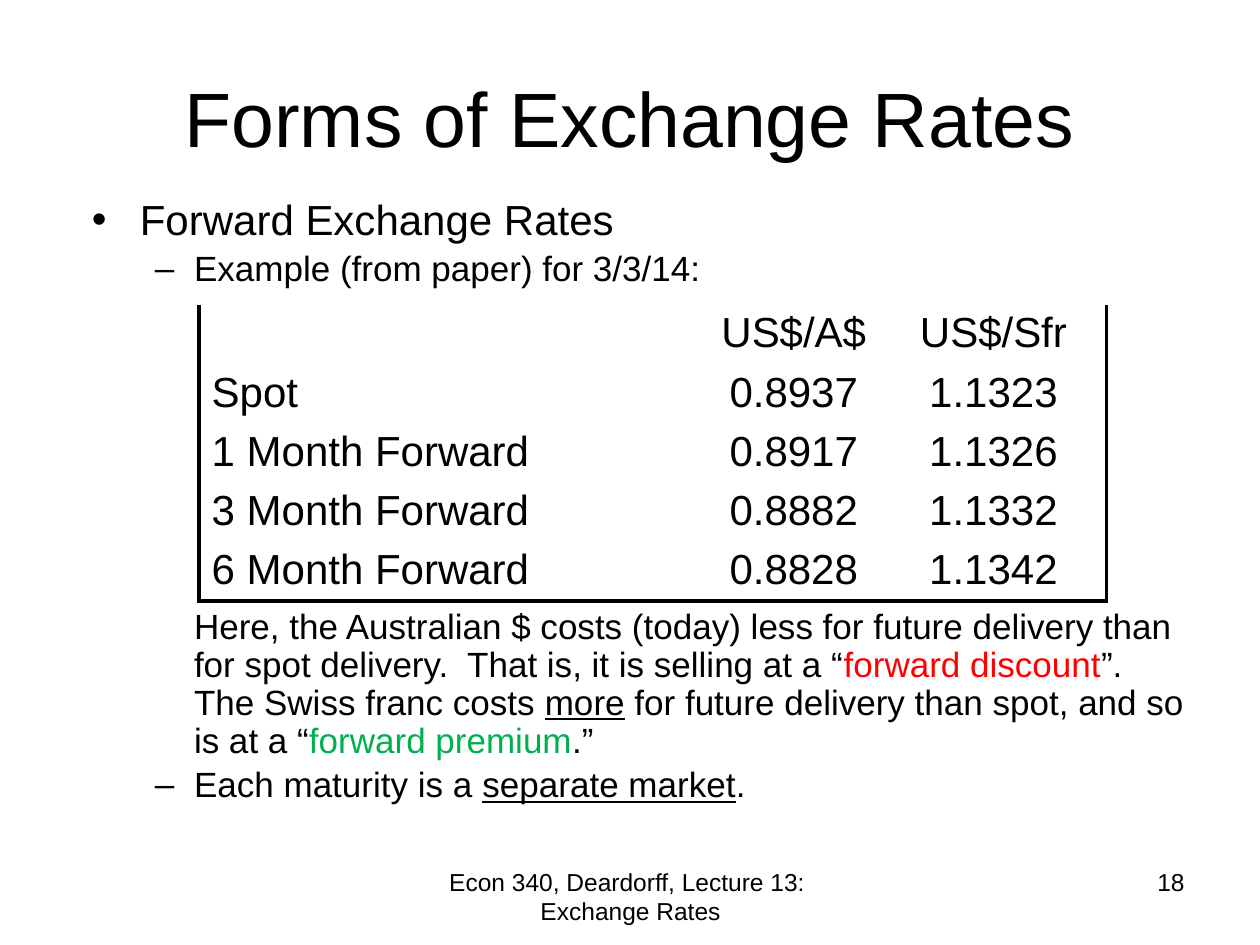
from dataclasses import dataclass

import pptx
import pptx.dml.color
import pptx.enum.text
import pptx.oxml
import pptx.oxml.ns
import pptx.util

Inches, Pt = pptx.util.Inches, pptx.util.Pt
ALIGN = pptx.enum.text.PP_ALIGN
ANCHOR = pptx.enum.text.MSO_ANCHOR


@dataclass(frozen=True)
class Theme:
    font: str = "Arial"
    text: str = "000000"
    discount: str = "FF0000"
    premium: str = "00B050"
    title: float = 44
    heading: float = 24
    detail: float = 20
    footer: float = 14
    border: float = 2.25


@dataclass(frozen=True)
class Run:
    text: str
    color: str = Theme.text
    underline: bool = False


@dataclass(frozen=True)
class Item:
    runs: list[Run]
    level: int = 1
    bullet: str = ""
    space_before: float = 4


@dataclass(frozen=True)
class Footer:
    text: str
    left: float
    width: float
    align: ALIGN


THEME = Theme()
ITEMS = [
    Item([Run("Forward Exchange Rates")], 0, "•", 4.8),
    Item([Run("Example (from paper) for 3/3/14:")], bullet="–"),
    # The space before this paragraph holds the table.
    Item([
        Run("Here, the Australian $ costs (today) less for future delivery "
            "than for spot delivery.  That is, it is selling at a “"),
        Run("forward discount", THEME.discount),
        Run("”. The Swiss franc costs "),
        Run("more", underline=True),
        Run(" for future delivery than spot, and so is at a “"),
        Run("forward premium", THEME.premium),
        Run(".”"),
    ], space_before=183),
    Item([Run("Each maturity is a "), Run("separate market", underline=True),
          Run(".")], bullet="–"),
]
RATES = [
    ("", "US$/A$", "US$/Sfr"),
    ("Spot", "0.8937", "1.1323"),
    ("1 Month Forward", "0.8917", "1.1326"),
    ("3 Month Forward", "0.8882", "1.1332"),
    ("6 Month Forward", "0.8828", "1.1342"),
]
COLUMN_WIDTHS = [4.03, 1.38, 1.79]
ROW_HEIGHT = 0.47
FOOTERS = [
    Footer("Econ 340, Deardorff, Lecture 13:  Exchange Rates", 3.42, 3.17, ALIGN.CENTER),
    Footer("18", 7.17, 2.33, ALIGN.RIGHT),
]


def add_text(p, text: str, *, size: float, color: str = THEME.text,
             underline: bool = False, align: ALIGN = ALIGN.LEFT) -> None:
    p.alignment = align
    r = p.add_run()
    r.text = text
    r.font.name = THEME.font
    r.font.size = Pt(size)
    r.font.underline = underline
    r.font.color.rgb = pptx.dml.color.RGBColor.from_string(color)


def place(sp, left: float, top: float, width: float, height: float) -> None:
    sp.left, sp.top = Inches(left), Inches(top)
    sp.width, sp.height = Inches(width), Inches(height)


def set_bullet(p, bullet: str, left: float, hanging: float) -> None:
    p_pr = p._p.get_or_add_pPr()
    p_pr.set("marL", str(Inches(left)))
    p_pr.set("indent", str(-Inches(hanging) if bullet else 0))
    ns = pptx.oxml.ns.nsdecls("a")
    xml = f'<a:buChar {ns} char="{bullet}"/>' if bullet else f"<a:buNone {ns}/>"
    p_pr.append(pptx.oxml.parse_xml(xml))


def set_borders(cell, sides: str) -> None:
    """Draw the given sides, a string of the letters L, R, T and B; clear the rest."""
    tc_pr = cell._tc.get_or_add_tcPr()
    ns = pptx.oxml.ns.nsdecls("a")
    solid = f'<a:solidFill><a:srgbClr val="{THEME.text}"/></a:solidFill>'
    for i, side in enumerate("LRTB"):
        fill = solid if side in sides else "<a:noFill/>"
        tc_pr.insert(i, pptx.oxml.parse_xml(
            f'<a:ln{side} {ns} w="{Pt(THEME.border)}">{fill}</a:ln{side}>'))


def add_title(slide) -> None:
    sp = slide.shapes.title
    place(sp, 0.5, 0.3, 9, 1.25)
    tf = sp.text_frame
    tf.auto_size = pptx.enum.text.MSO_AUTO_SIZE.NONE
    tf.vertical_anchor = ANCHOR.MIDDLE
    add_text(tf.paragraphs[0], "Forms of Exchange Rates", size=THEME.title,
             align=ALIGN.CENTER)


def add_body(slide) -> None:
    sp = slide.placeholders[1]
    place(sp, 0.63, 1.53, 8.91, 5.53)
    tf = sp.text_frame
    tf.auto_size = pptx.enum.text.MSO_AUTO_SIZE.NONE
    tf.vertical_anchor = ANCHOR.TOP
    for i, item in enumerate(ITEMS):
        p = tf.add_paragraph() if i else tf.paragraphs[0]
        p.level = item.level
        p.line_spacing = 0.9
        p.space_before = Pt(item.space_before)
        set_bullet(p, item.bullet, *((0.81, 0.31) if item.level else (0.38, 0.38)))
        size = THEME.detail if item.level else THEME.heading
        for run in item.runs:
            add_text(p, run.text, size=size, color=run.color, underline=run.underline)


def add_rates(slide) -> None:
    n_rows, n_cols = len(RATES), len(COLUMN_WIDTHS)
    table = slide.shapes.add_table(
        n_rows, n_cols, Inches(1.58), Inches(2.42),
        Inches(sum(COLUMN_WIDTHS)), Inches(n_rows * ROW_HEIGHT)).table
    table.first_row = table.horz_banding = False
    for column, width in zip(table.columns, COLUMN_WIDTHS):
        column.width = Inches(width)
    for row, values in enumerate(RATES):
        table.rows[row].height = Inches(ROW_HEIGHT)
        for col, value in enumerate(values):
            cell = table.cell(row, col)
            cell.margin_top = cell.margin_bottom = Inches(0.04)
            cell.fill.background()
            set_borders(cell, "L" * (col == 0) + "R" * (col == n_cols - 1)
                        + "B" * (row == n_rows - 1))
            add_text(cell.text_frame.paragraphs[0], value, size=THEME.heading,
                     align=ALIGN.CENTER if col else ALIGN.LEFT)


def add_footer(slide, footer: Footer) -> None:
    sp = slide.shapes.add_textbox(Inches(footer.left), Inches(6.83),
                                  Inches(footer.width), Inches(0.52))
    sp.text_frame.word_wrap = True
    add_text(sp.text_frame.paragraphs[0], footer.text, size=THEME.footer,
             align=footer.align)


def main() -> None:
    prs = pptx.Presentation()
    prs.slide_width, prs.slide_height = Inches(10), Inches(7.5)
    slide = prs.slides.add_slide(prs.slide_layouts[1])
    add_title(slide)
    add_body(slide)
    add_rates(slide)
    for footer in FOOTERS:
        add_footer(slide, footer)
    prs.save("out.pptx")


if __name__ == "__main__":
    main()
